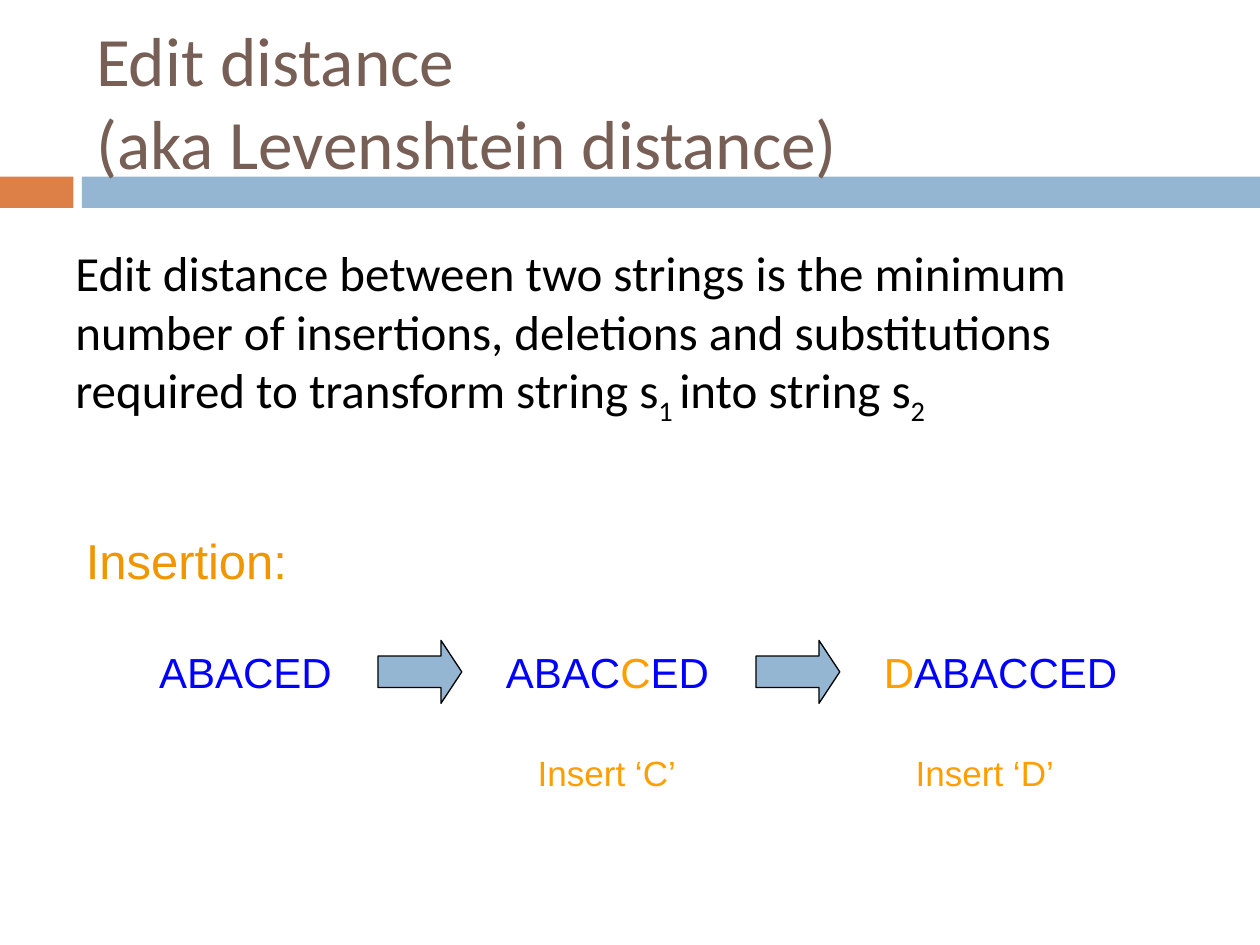
from pptx import Presentation
from pptx.dml.color import RGBColor
from pptx.enum.shapes import MSO_SHAPE as Shape
from pptx.enum.text import MSO_ANCHOR as Anchor
from pptx.util import Cm, Pt

BLUE_BAR = RGBColor(0x94, 0xB6, 0xD2)
ORANGE_BAR = RGBColor(0xDD, 0x80, 0x47)
BROWN = RGBColor(0x77, 0x5F, 0x55)
BLACK = RGBColor(0, 0, 0)
AMBER = RGBColor(0xEF, 0x96, 0x00)
LETTER_BLUE = RGBColor(0, 0, 0xFF)
INSERTED = RGBColor(0xFF, 0x9E, 0x00)

presentation = Presentation()
presentation.slide_width = Cm(25.4)
presentation.slide_height = Cm(19.05)
slide = presentation.slides.add_slide(presentation.slide_layouts[6])


def add_shape(kind, box, color):
    shape = slide.shapes.add_shape(kind, *map(Cm, box))
    shape.shadow.inherit = False
    shape.fill.solid()
    shape.fill.fore_color.rgb = color
    shape.line.fill.background()
    return shape


def add_text(box, runs, size, name="Arial", anchor=Anchor.TOP):
    """Add one paragraph of (text, colour, is_subscript) runs; a "\\v" run breaks the line."""
    frame = slide.shapes.add_textbox(*map(Cm, box)).text_frame
    frame.word_wrap = True
    frame.vertical_anchor = anchor
    paragraph = frame.paragraphs[0]
    for text, color, is_subscript in runs:
        if text == "\v":
            paragraph.add_line_break()
            continue
        run = paragraph.add_run()
        run.text = text
        for attribute, value in {"size": Pt(size), "name": name}.items():
            setattr(run.font, attribute, value)
        run.font.color.rgb = color
        if is_subscript:
            run._r.get_or_add_rPr().set("baseline", "-25000")


# Divider bars and title
add_shape(Shape.RECTANGLE, (0, 3.56, 1.48, 0.63), ORANGE_BAR)
add_shape(Shape.RECTANGLE, (1.65, 3.56, 23.75, 0.63), BLUE_BAR)
title = [("Edit distance ", BROWN, False), ("\v", BROWN, False),
         ("(aka Levenshtein distance)", BROWN, False)]
add_text((1.69, 0.64, 22.65, 2.75), title, 39.6, "Calibri", Anchor.MIDDLE)

# Definition
definition = [
    ("Edit distance between two strings is the minimum number of insertions, "
     "deletions and substitutions required to transform string s", BLACK, False),
    ("1 ", BLACK, True),
    ("into string s", BLACK, False),
    ("2", BLACK, True),
]
add_text((1.27, 4.76, 22.86, 5.82), definition, 28, "Calibri")

# Insertion example
add_text((1.48, 10.58, 4.65, 1.45), [("Insertion:", AMBER, False)], 28)

STEP_TOP = 12.91
steps = [
    (2.96, 4.02, [("ABACED", LETTER_BLUE)]),
    (9.95, 4.87, [("ABAC", LETTER_BLUE), ("C", INSERTED), ("ED", LETTER_BLUE)]),
    (17.57, 5.72, [("D", INSERTED), ("ABACCED", LETTER_BLUE)]),
]
for left, width, parts in steps:
    runs = [(text, color, False) for text, color in parts]
    add_text((left, STEP_TOP, width, 1.27), runs, 24)

for arrow_left, letter in ((7.62, "C"), (15.24, "D")):
    arrow = add_shape(Shape.RIGHT_ARROW, (arrow_left, STEP_TOP, 1.69, 1.27), BLUE_BAR)
    arrow.adjustments[0] = 0.5
    arrow.adjustments[1] = 0.33
    arrow.line.color.rgb = BLACK
    arrow.line.width = Pt(0.75)
    caption = [(f"Insert ‘{letter}’", INSERTED, False)]
    add_text((arrow_left + 2.97, 15.03, 3.6, 1.96), caption, 20)

presentation.save("out.pptx")
